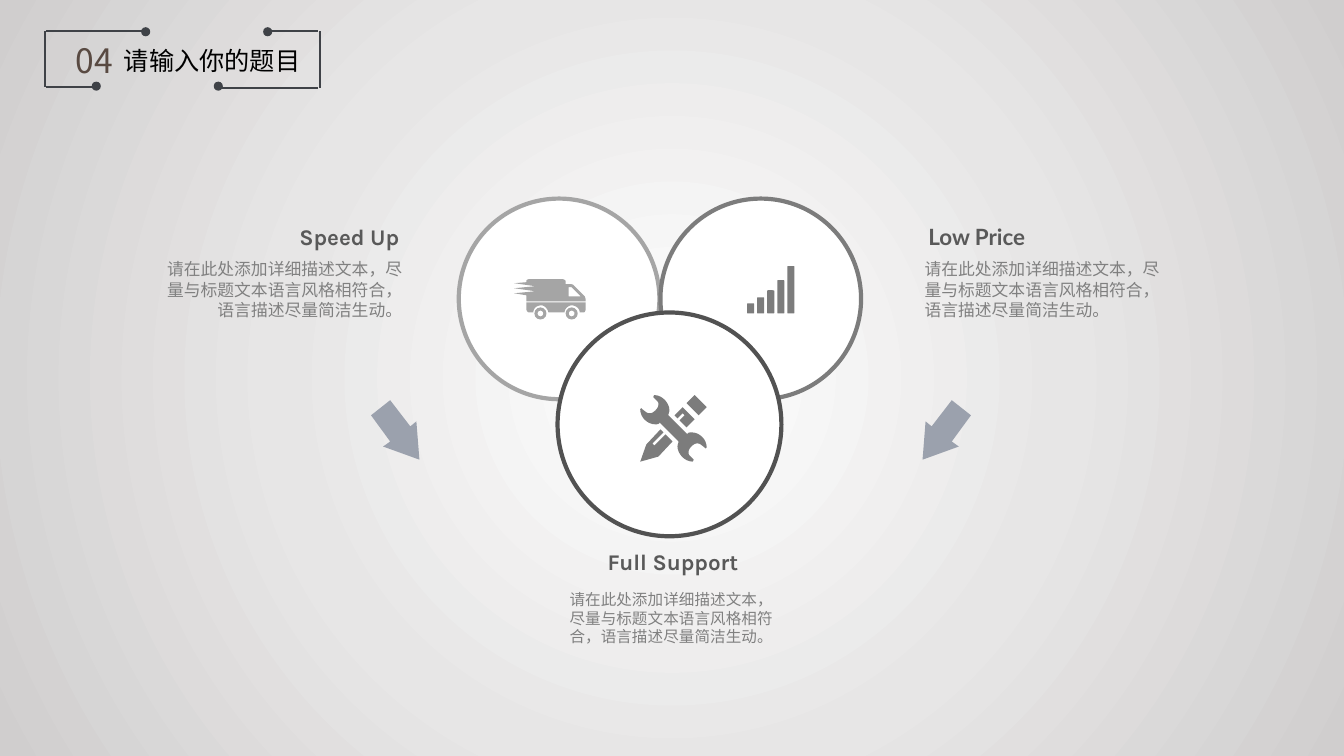
from dataclasses import dataclass
from lxml.etree import SubElement
from pptx import Presentation
from pptx.dml.color import RGBColor
from pptx.enum.shapes import MSO_CONNECTOR, MSO_SHAPE
from pptx.enum.text import MSO_ANCHOR, MSO_AUTO_SIZE, PP_ALIGN
from pptx.oxml import parse_xml
from pptx.oxml.ns import nsdecls, qn
from pptx.util import Inches, Pt


@dataclass(frozen=True)
class Theme:
    frame: str = "3F4247"
    number: str = "594A42"
    title: str = "000000"
    heading: str = "595959"
    body: str = "808080"
    arrow: str = "9BA1AD"
    disc: str = "FFFFFF"
    light: str = "A5A5A5"
    middle: str = "7C7C7C"
    dark: str = "525252"
    backdrop: tuple = ((0, "FFFFFF"), (51, "E7E6E6"), (100, "D0CECE"))
    title_font: str = "Noto Sans CJK SC"
    heading_font: str = "Karla"
    body_font: str = "Lato"
    number_size: float = 24
    title_size: float = 18
    heading_size: float = 16
    body_size: float = 12
    small_size: float = 11.1


theme = Theme()
presentation = Presentation()
presentation.slide_width, presentation.slide_height = Inches(13.33), Inches(7.5)
slide = presentation.slides.add_slide(presentation.slide_layouts[6])
shapes = slide.shapes


def paint(shape, fill, line=None):
    shape.shadow.inherit = False
    shape.fill.solid()
    shape.fill.fore_color.rgb = RGBColor.from_string(fill)
    if line:
        shape.line.color.rgb = RGBColor.from_string(line)
        shape.line.width = Pt(3)
    else:
        shape.line.fill.background()


def draw_outline(contours, fill):
    """Points of two numbers are corners; six numbers are a cubic curve."""
    builder = None
    for start, *segments in contours:
        points = [start]
        for segment in segments:
            if len(segment) == 2:
                points.append(segment)
                continue
            corners = [points[-1], segment[:2], segment[2:4], segment[4:]]
            for step in range(1, 9):
                t = step / 8
                weights = ((1 - t) ** 3, 3 * t * (1 - t) ** 2, 3 * t * t * (1 - t), t ** 3)
                points.append(tuple(sum(w * corner[axis] for w, corner in zip(weights, corners))
                                    for axis in (0, 1)))
        points = [(Inches(x), Inches(y)) for x, y in points]
        if builder is None:
            builder = shapes.build_freeform(*points[0], scale=1.0)
        else:
            builder.move_to(*points[0])
        builder.add_line_segments(points[1:], close=True)
    paint(builder.convert_to_shape(), fill)


# Radial background
slide.background.fill.solid()
background = slide.element.find(".//" + qn("p:bgPr"))
stops = "".join(f'<a:gs pos="{position * 1000}"><a:srgbClr val="{color}"/></a:gs>'
                for position, color in theme.backdrop)
background.replace(background[0], parse_xml(
    f'<a:gradFill {nsdecls("a")} rotWithShape="1"><a:gsLst>{stops}</a:gsLst><a:path path="circle">'
    '<a:fillToRect l="50000" t="50000" r="50000" b="50000"/></a:path></a:gradFill>'))

# Title frame
frame_lines = [
    (1.42, 0.31, 0.46, 0.31), (0.45, 0.31, 0.45, 0.86), (0.46, 0.86, 0.94, 0.86),
    (2.19, 0.87, 3.15, 0.87), (3.17, 0.87, 3.17, 0.31), (3.15, 0.31, 2.67, 0.31),
]
for ends in frame_lines:
    connector = shapes.add_connector(MSO_CONNECTOR.STRAIGHT, *map(Inches, ends))
    connector.line.color.rgb = RGBColor.from_string(theme.frame)
    connector.line.width = Pt(1.5)
    SubElement(connector.element.spPr, qn("a:effectLst"))
for left, top in [(1.4, 0.27), (0.91, 0.81), (2.12, 0.81), (2.61, 0.27)]:
    dot = shapes.add_shape(MSO_SHAPE.OVAL, *map(Inches, (left, top, 0.09, 0.09)))
    paint(dot, theme.frame)

# Arrows, mirrored about the middle of the slide
arrow = [(3.87, 3.97), (4.07, 4.23), (4.13, 4.18), (4.16, 4.56),
         (3.8, 4.43), (3.87, 4.38), (3.68, 4.12)]
draw_outline([arrow], theme.arrow)
draw_outline([[(13.31 - x, y) for x, y in arrow]], theme.arrow)

# Texts
description = "请在此处添加详细描述文本，尽量与标题文本语言风格相符合，语言描述尽量简洁生动。"
normal, none, half = (0.1, 0.05, 0.1, 0.05), (0, 0, 0, 0), (0, 0.05, 0.1, 0.05)
top, middle, bottom = MSO_ANCHOR.TOP, MSO_ANCHOR.MIDDLE, MSO_ANCHOR.BOTTOM
left, center, right = PP_ALIGN.LEFT, PP_ALIGN.CENTER, PP_ALIGN.RIGHT
number_style = (theme.title_font, theme.number_size, theme.number, False)
title_style = (theme.title_font, theme.title_size, theme.title, False)
heading_style = (theme.heading_font, theme.heading_size, theme.heading, True)
price_style = (theme.body_font, theme.heading_size, theme.heading, True)
body_style = (theme.body_font, theme.body_size, theme.body, False)
small_style = (theme.body_font, theme.small_size, theme.body, False)
fit, fixed = MSO_AUTO_SIZE.SHAPE_TO_FIT_TEXT, MSO_AUTO_SIZE.NONE
texts = [
    ("04", (0.65, 0.35, 0.6, 0.5), number_style, left, top, normal, fit, False),
    ("请输入你的题目", (1.13, 0.4, 1.97, 0.4), title_style, left, top, normal, fit, False),
    (description, (5.58, 5.72, 2.25, 0.82), small_style, center, middle, half, fixed, True),
    ("Full Support", (5.55, 5.39, 2.25, 0.36), heading_style, center, bottom, normal, fixed, True),
    ("Speed Up", (1.86, 2.2, 2.2, 0.29), heading_style, right, middle, normal, fixed, True),
    (description, (1.65, 2.57, 2.34, 0.61), body_style, right, top, none, fit, True),
    ("Low Price", (9.11, 2.2, 2.2, 0.29), price_style, left, middle, normal, fixed, True),
    (description, (9.17, 2.57, 2.34, 0.61), body_style, left, top, none, fit, True),
]
for text, box, (name, size, color, bold), alignment, anchor, insets, auto_size, wrap in texts:
    frame = shapes.add_textbox(*map(Inches, box)).text_frame
    margins = dict(zip(("margin_left", "margin_top", "margin_right", "margin_bottom"),
                       map(Inches, insets)))
    frame_format = {"word_wrap": wrap, "auto_size": auto_size, "vertical_anchor": anchor, **margins}
    for attribute, value in frame_format.items():
        setattr(frame, attribute, value)
    paragraph = frame.paragraphs[0]
    paragraph.alignment = alignment
    run = paragraph.add_run()
    run.text = text
    for attribute, value in {"name": name, "size": Pt(size), "bold": bold}.items():
        setattr(run.font, attribute, value)
    run.font.color.rgb = RGBColor.from_string(color)
    SubElement(run.font._element, qn("a:ea")).set("typeface", name)

# Icon outlines
van = [
    [(5.8, 2.94), (5.69, 2.83), (5.68, 2.82, 5.67, 2.82, 5.66, 2.82), (5.61, 2.82), (5.61, 2.79),
     (5.61, 2.78, 5.59, 2.77, 5.58, 2.77), (5.25, 2.77), (5.23, 2.77, 5.22, 2.78, 5.22, 2.79),
     (5.22, 2.8), (5.1, 2.81), (5.31, 2.84), (5.1, 2.86), (5.31, 2.89), (5.1, 2.91),
     (5.22, 2.93), (5.22, 2.99), (5.81, 2.99), (5.81, 2.97)],
    [(5.76, 2.94), (5.64, 2.94), (5.64, 2.85), (5.67, 2.85)],
    [(5.81, 3), (5.81, 3.06), (5.81, 3.08, 5.8, 3.1, 5.79, 3.1), (5.75, 3.1),
     (5.75, 3.06, 5.71, 3.03, 5.67, 3.03), (5.64, 3.03, 5.6, 3.06, 5.6, 3.1), (5.44, 3.1),
     (5.43, 3.06, 5.4, 3.03, 5.37, 3.03), (5.32, 3.03, 5.29, 3.06, 5.29, 3.1), (5.25, 3.1),
     (5.23, 3.1, 5.22, 3.08, 5.22, 3.06), (5.22, 3)],
]
pencil = [
    [(6.6, 4.31), (6.49, 4.42), (6.47, 4.4), (6.58, 4.29), (6.55, 4.26), (6.41, 4.41),
     (6.35, 4.58), (6.53, 4.53), (6.67, 4.38)],
    [(6.72, 4.15), (6.77, 4.1), (6.79, 4.12), (6.74, 4.17), (6.81, 4.24), (6.89, 4.16),
     (6.77, 4.04), (6.69, 4.12)],
    [(6.81, 4), (6.89, 3.92), (7.01, 4.04), (6.93, 4.12)],
]
wrench_half = [
    (6.82, 4.31), (6.63, 4.12), (6.63, 4.1, 6.64, 4.09, 6.64, 4.07),
    (6.64, 4, 6.57, 3.92, 6.49, 3.92), (6.49, 3.92, 6.48, 3.93, 6.48, 3.94),
    (6.54, 4, 6.53, 3.99, 6.53, 4.02), (6.53, 4.05, 6.48, 4.1, 6.45, 4.1),
    (6.42, 4.1, 6.42, 4.1, 6.36, 4.05), (6.36, 4.05, 6.35, 4.06, 6.35, 4.06),
    (6.35, 4.14, 6.42, 4.21, 6.5, 4.21), (6.51, 4.21, 6.53, 4.21, 6.54, 4.2),
]
# The other jaw is the first one turned half way round (6.68, 4.25)
wrench = wrench_half + [tuple((13.36, 8.5)[i % 2] - value for i, value in enumerate(point))
                        for point in wrench_half]

# Discs with their icons
discs = [
    ((4.55, 1.97, 1.99, 1.99), theme.light, [(van, theme.light)]),
    ((6.55, 1.97, 1.99, 1.99), theme.middle, []),
    ((5.53, 3.1, 2.22, 2.22), theme.dark,
     [([part], theme.middle) for part in pencil + [wrench]]),
]
for box, color, icons in discs:
    disc = shapes.add_shape(MSO_SHAPE.OVAL, *map(Inches, box))
    paint(disc, theme.disc, color)
    for contours, icon_color in icons:
        draw_outline(contours, icon_color)

# Van wheels
for wheel_left in (5.3, 5.61):
    wheel = shapes.add_shape(MSO_SHAPE.DONUT, *map(Inches, (wheel_left, 3.05, 0.12, 0.12)))
    wheel.adjustments[0] = 0.26
    paint(wheel, theme.light)

# Rising bars
for index, height in enumerate((0.1, 0.16, 0.23, 0.33, 0.47)):
    box = (7.41 + index * 0.1, 3.11 - height, 0.07, height)
    bar = shapes.add_shape(MSO_SHAPE.ROUNDED_RECTANGLE, *map(Inches, box))
    bar.adjustments[0] = 0.1
    paint(bar, theme.middle)

presentation.save("out.pptx")
